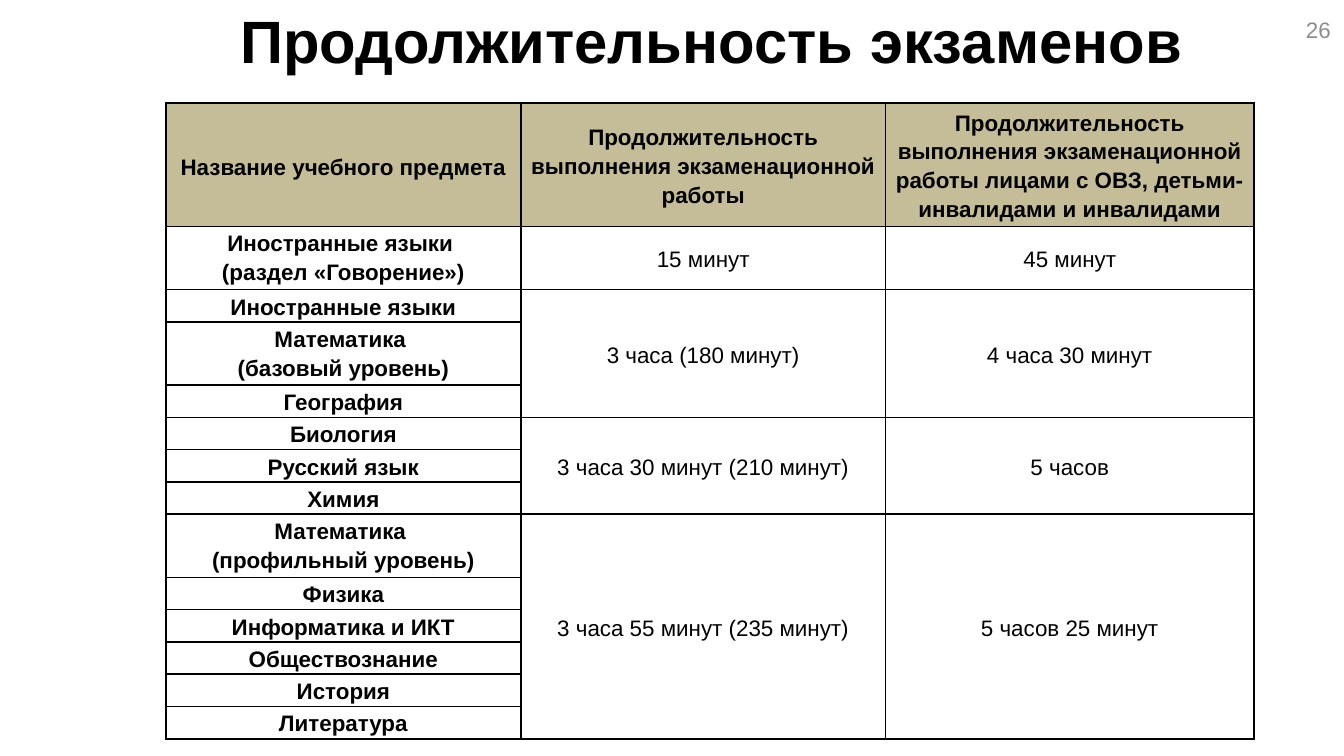
import pptx
import pptx.util
import pptx.dml.color
import pptx.enum.text
import pptx.oxml.ns
import lxml.etree

UNIT = 4572
INK = "000000"
TAN = "C4BD97"
GRAY = "8C8C8C"
ALIGN = pptx.enum.text.PP_ALIGN
ANCHOR = pptx.enum.text.MSO_ANCHOR

COLS = [528, 543, 548]
HEADS = [
    "Название учебного предмета",
    "Продолжительность выполнения экзаменационной работы",
    "Продолжительность выполнения экзаменационной работы лицами с ОВЗ, детьми-инвалидами и инвалидами",
]
GROUPS = [
    ("15 минут", "45 минут", ["Иностранные языки \n(раздел «Говорение»)"]),
    ("3 часа (180 минут)", "4 часа 30 минут",
     ["Иностранные языки", "Математика \n(базовый уровень)", "География"]),
    ("3 часа 30 минут (210 минут)", "5 часов",
     ["Биология", "Русский язык", "Химия"]),
    ("3 часа 55 минут (235 минут)", "5 часов 25 минут",
     ["Математика \n(профильный уровень)", "Физика", "Информатика и ИКТ",
      "Обществознание", "История", "Литература"]),
]


def px(n):
    return pptx.util.Emu(n * UNIT)


def color(code):
    return pptx.dml.color.RGBColor.from_string(code)


def write(frame, text, size=12, bold=False, ink=INK, align=ALIGN.CENTER, gap=None):
    for i, line in enumerate(text.split("\n")):
        para = frame.add_paragraph() if i else frame.paragraphs[0]
        para.alignment = align
        if gap:
            para.line_spacing = gap
        run = para.add_run()
        run.text = line
        font = run.font
        font.name = "Arial"
        font.size = pptx.util.Pt(size)
        font.bold = bold
        font.color.rgb = color(ink)


def label(slide, box, text, anchor=ANCHOR.TOP, **style):
    frame = slide.shapes.add_textbox(*map(px, box)).text_frame
    frame.word_wrap = True
    frame.vertical_anchor = anchor
    write(frame, text, **style)


def border(cell):
    props = cell._tc.get_or_add_tcPr()
    for i, side in enumerate(["lnL", "lnR", "lnT", "lnB"]):
        line = lxml.etree.Element(pptx.oxml.ns.qn("a:" + side), w="12700")
        fill = lxml.etree.SubElement(line, pptx.oxml.ns.qn("a:solidFill"))
        lxml.etree.SubElement(fill, pptx.oxml.ns.qn("a:srgbClr"), val=INK)
        props.insert(i, line)


def fill_cell(cell, text, pad=False, anchor=ANCHOR.MIDDLE, **style):
    cell.margin_left = cell.margin_right = px(6 if pad else 0)
    cell.margin_top = px(2 if pad else 0)
    cell.margin_bottom = 0
    cell.vertical_anchor = anchor
    write(cell.text_frame, text, gap=1.15, **style)


def grid(slide, box):
    names = [name for group in GROUPS for name in group[2]]
    shape = slide.shapes.add_table(len(names) + 1, len(COLS), *map(px, box))
    table = shape.table
    table.first_row = table.horz_banding = False
    for col, width in zip(table.columns, COLS):
        col.width = px(width)
    for row, high in zip(table.rows, [178] + [94 if "\n" in n else 48 for n in names]):
        row.height = px(high)
    for cell in table.iter_cells():
        cell.margin_top = cell.margin_bottom = 0
        cell.fill.background()
        border(cell)
    for i, head in enumerate(HEADS):
        cell = table.cell(0, i)
        cell.fill.solid()
        cell.fill.fore_color.rgb = color(TAN)
        fill_cell(cell, head, pad=i == 0, bold=True)
    top = 1
    for *times, names in GROUPS:
        for i, name in enumerate(names):
            fill_cell(table.cell(top + i, 0), name, pad=True,
                      anchor=ANCHOR.TOP, bold=True)
        for col, time in enumerate(times, 1):
            cell = table.cell(top, col)
            if len(names) > 1:
                cell.merge(table.cell(top + len(names) - 1, col))
            fill_cell(cell, time)
        top += len(names)


def main():
    deck = pptx.Presentation()
    deck.slide_width, deck.slide_height = px(2000), px(1125)
    slide = deck.slides.add_slide(deck.slide_layouts[6])
    label(slide, (134, -4, 1850, 128), "Продолжительность экзаменов", size=32, bold=True)
    label(slide, (1534, 4, 466, 80), "26", anchor=ANCHOR.MIDDLE, ink=GRAY,
          align=ALIGN.RIGHT)
    grid(slide, (247, 153, sum(COLS), 942))
    deck.save("out.pptx")


if __name__ == "__main__":
    main()
